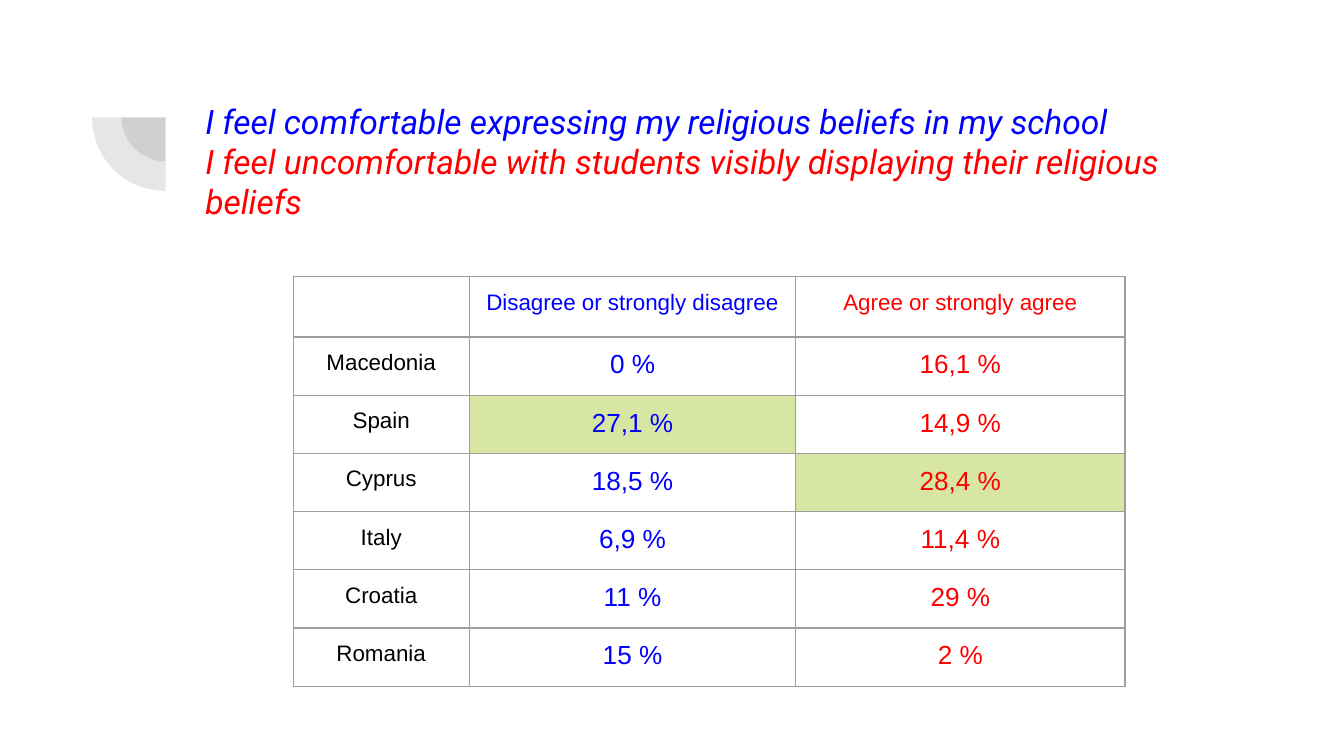
from lxml import etree
from pptx import Presentation
from pptx.dml.color import RGBColor
from pptx.enum.shapes import MSO_SHAPE
from pptx.enum.text import PP_ALIGN
from pptx.oxml.ns import qn
from pptx.util import Cm, Pt

PIE = MSO_SHAPE.PIE
CENTER = PP_ALIGN.CENTER

BLACK = RGBColor(0x00, 0x00, 0x00)
BLUE = RGBColor(0x00, 0x00, 0xFF)
RED = RGBColor(0xFF, 0x00, 0x00)
GREEN = RGBColor(0xD7, 0xE6, 0xA3)
DARK_GRAY = RGBColor(0x42, 0x42, 0x42)
BORDER_GRAY = RGBColor(0x9E, 0x9E, 0x9E)

STATEMENTS = [
    ("I feel comfortable expressing my religious beliefs in my school", BLUE),
    ("I feel uncomfortable with students visibly displaying their religious beliefs", RED),
]
ANSWERS = [
    ("", "Disagree or strongly disagree", "Agree or strongly agree"),
    ("Macedonia", "0 %", "16,1 %"),
    ("Spain", "27,1 %", "14,9 %"),
    ("Cyprus", "18,5 %", "28,4 %"),
    ("Italy", "6,9 %", "11,4 %"),
    ("Croatia", "11 %", "29 %"),
    ("Romania", "15 %", "2 %"),
]
HIGHLIGHTS = {(2, 1), (3, 2)}
COLUMN_COLORS = (BLACK, BLUE, RED)
COLUMN_WIDTHS = (3.33, 6.17, 6.22)
HEADER_HEIGHT, ROW_HEIGHT = 1.14, 1.1


class SlideBuilder:
    title_font = "Roboto"
    table_font = "Arial"
    inset = Cm(0.25)

    def __init__(self, page):
        self.page = page

    def set_insets(self, holder):
        holder.margin_left = holder.margin_right = self.inset
        holder.margin_top = holder.margin_bottom = self.inset

    def quarter_disc(self, center_x, center_y, radius):
        """Draw the translucent lower left quarter of a disc."""
        disc = self.page.shapes.add_shape(
            PIE, Cm(center_x - radius), Cm(center_y - radius), Cm(2 * radius), Cm(2 * radius))
        disc.adjustments[0], disc.adjustments[1] = 108, 162
        disc.rotation = 270
        disc.shadow.inherit = False
        disc.line.fill.background()
        disc.fill.solid()
        disc.fill.fore_color.rgb = DARK_GRAY
        color = disc.fill._xPr.find(qn("a:solidFill"))[0]
        etree.SubElement(color, qn("a:alpha"), val="13000")

    def title(self, left, top, width, height, lines):
        box = self.page.shapes.add_textbox(Cm(left), Cm(top), Cm(width), Cm(height))
        frame = box.text_frame
        frame.word_wrap = True
        self.set_insets(frame)
        for index, (text, color) in enumerate(lines):
            para = frame.add_paragraph() if index else frame.paragraphs[0]
            para.text = text
            para.font.name = self.title_font
            para.font.size = Pt(18)
            para.font.italic = True
            para.font.color.rgb = color

    def border(self, cell):
        properties = cell._tc.get_or_add_tcPr()
        for side in ("a:lnL", "a:lnR", "a:lnT", "a:lnB"):
            line = etree.SubElement(properties, qn(side), w=str(Pt(0.75)))
            fill = etree.SubElement(line, qn("a:solidFill"))
            etree.SubElement(fill, qn("a:srgbClr"), val=str(BORDER_GRAY))

    def cell(self, cell, text, size, color, highlighted):
        self.set_insets(cell)
        self.border(cell)
        if highlighted:
            cell.fill.solid()
            cell.fill.fore_color.rgb = GREEN
        else:
            cell.fill.background()
        para = cell.text_frame.paragraphs[0]
        para.text = text
        para.alignment = CENTER
        para.font.name = self.table_font
        para.font.size = Pt(size)
        para.font.color.rgb = color

    def table(self, left, top, rows):
        height = HEADER_HEIGHT + ROW_HEIGHT * (len(rows) - 1)
        table = self.page.shapes.add_table(
            len(rows), len(COLUMN_WIDTHS), Cm(left), Cm(top),
            Cm(sum(COLUMN_WIDTHS)), Cm(height)).table
        table.first_row = table.horz_banding = False
        for column, width in zip(table.columns, COLUMN_WIDTHS):
            column.width = Cm(width)
        for r, texts in enumerate(rows):
            table.rows[r].height = Cm(ROW_HEIGHT if r else HEADER_HEIGHT)
            for c, text in enumerate(texts):
                size = 14 if r and c else 12
                self.cell(table.cell(r, c), text, size, COLUMN_COLORS[c], (r, c) in HIGHLIGHTS)


def main():
    deck = Presentation()
    deck.slide_width, deck.slide_height = Cm(25.4), Cm(14.29)
    builder = SlideBuilder(deck.slides.add_slide(deck.slide_layouts[6]))
    for radius in (0.83, 1.39):
        builder.quarter_disc(3.13, 2.22, radius)
    builder.title(3.63, 1.65, 19.53, 2.77, STATEMENTS)
    builder.table(5.54, 5.23, ANSWERS)
    deck.save("out.pptx")


if __name__ == "__main__":
    main()
